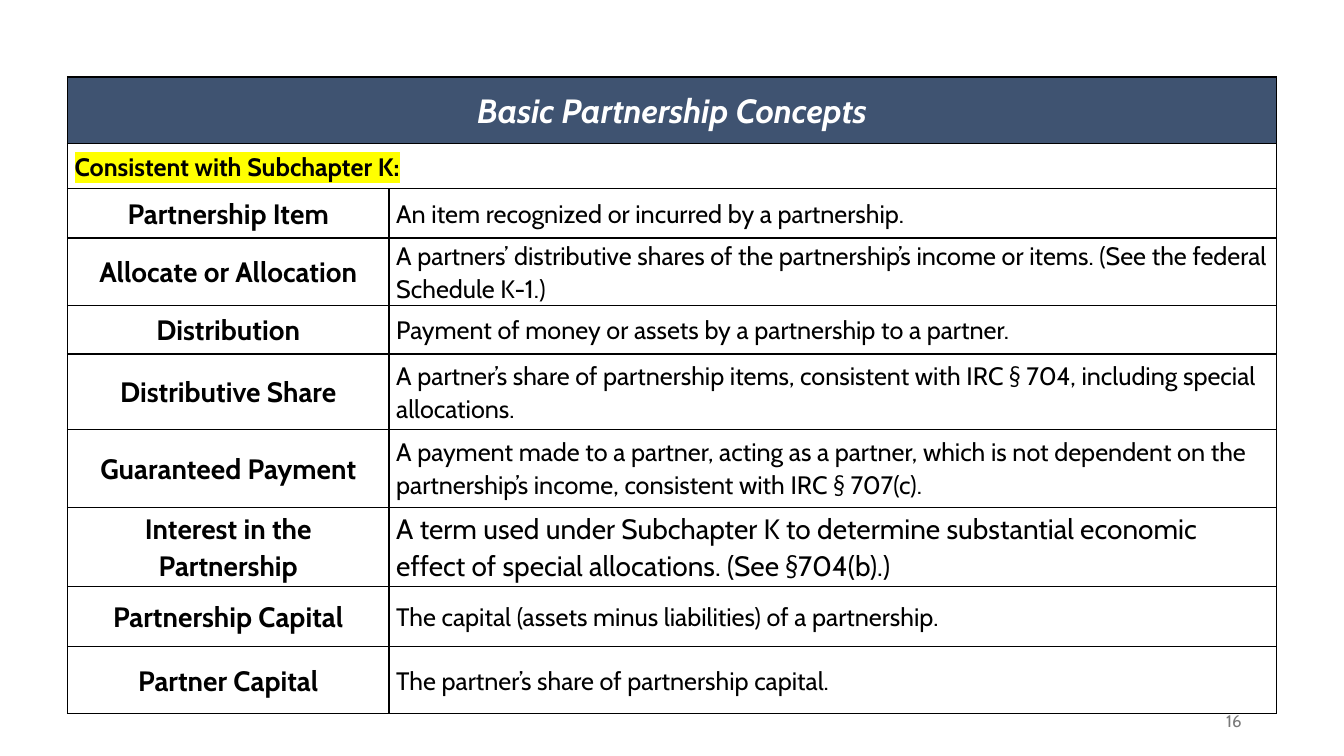
from dataclasses import dataclass

from lxml import etree
from pptx import Presentation
from pptx import util as u
from pptx.dml.color import RGBColor
from pptx.enum import text as t
from pptx.oxml import ns


@dataclass(frozen=True)
class Theme:
    font: str = "Cabin"
    ink: str = "000000"
    header_fill: str = "3F5371"
    header_ink: str = "FFFFFF"
    highlight: str = "FFFF00"
    page_ink: str = "797979"
    title_size: int = 24
    term_size: int = 20
    body_size: int = 18
    page_size: int = 12
    border_width: int = 1


THEME = Theme()

TITLE = "Basic Partnership Concepts"
SUBTITLE = "Consistent with Subchapter K:"
# Term, definition, definition size, row height in cm
CONCEPTS = [
    ("Partnership Item", "An item recognized or incurred by a partnership.",
     THEME.body_size, 1.24),
    ("Allocate or Allocation",
     "A partners’ distributive shares of the partnership’s income or items. "
     "(See the federal Schedule K-1.)", THEME.body_size, 1.7),
    ("Distribution", "Payment of money or assets by a partnership to a partner.",
     THEME.body_size, 1.22),
    ("Distributive Share",
     "A partner’s share of partnership items, consistent with IRC § 704, "
     "including special allocations.", THEME.body_size, 1.9),
    ("Guaranteed Payment",
     "A payment made to a partner, acting as a partner, which is not dependent on "
     "the partnership’s income, consistent with IRC § 707(c).", THEME.body_size, 1.96),
    ("Interest in the Partnership",
     "A term used under Subchapter K to determine substantial economic effect of "
     "special allocations. (See §704(b).)", THEME.term_size, 2.01),
    ("Partnership Capital", "The capital (assets minus liabilities) of a partnership.",
     THEME.body_size, 1.5),
    ("Partner Capital", "The partner’s share of partnership capital.",
     THEME.body_size, 1.7),
]
HEADING_HEIGHTS = [1.68, 1.14]
TERM_SHARE = 0.266


def write_text(frame, words, size, color=THEME.ink, bold=False, italic=False,
               align=t.PP_ALIGN.LEFT, line_spacing=None, space_after=0, highlight=None):
    frame.word_wrap = True
    paragraph = frame.paragraphs[0]
    paragraph.alignment = align
    paragraph.space_after = u.Pt(space_after)
    if line_spacing:
        paragraph.line_spacing = line_spacing
    run = paragraph.add_run()
    run.text = words
    font = run.font
    font.name, font.size, font.bold, font.italic = THEME.font, u.Pt(size), bold, italic
    font.color.rgb = RGBColor.from_string(color)
    if highlight:
        marker = etree.Element(ns.qn("a:highlight"))
        etree.SubElement(marker, ns.qn("a:srgbClr"), val=highlight)
        run._r.rPr.find(ns.qn("a:solidFill")).addnext(marker)


def draw_borders(cell):
    properties = cell._tc.get_or_add_tcPr()
    for index, side in enumerate(("lnL", "lnR", "lnT", "lnB")):
        line = etree.Element(ns.qn(f"a:{side}"), w=str(u.Pt(THEME.border_width)))
        fill = etree.SubElement(line, ns.qn("a:solidFill"))
        etree.SubElement(fill, ns.qn("a:srgbClr"), val=THEME.ink)
        properties.insert(index, line)


def fill_cell(cell, words, size, **text_format):
    cell.margin_left = cell.margin_right = u.Cm(0.18)
    cell.margin_top = cell.margin_bottom = 0
    cell.vertical_anchor = t.MSO_ANCHOR.MIDDLE
    write_text(cell.text_frame, words, size, line_spacing=1.07, space_after=6,
               **text_format)


def add_concept_table(slide, left, top, width):
    heights = HEADING_HEIGHTS + [concept[-1] for concept in CONCEPTS]
    table = slide.shapes.add_table(len(heights), 2, u.Cm(left), u.Cm(top),
                                   u.Cm(width), u.Cm(sum(heights))).table
    table.first_row = table.horz_banding = False
    for column, share in zip(table.columns, (TERM_SHARE, 1 - TERM_SHARE)):
        column.width = u.Cm(width * share)
    for row, height in zip(table.rows, heights):
        row.height = u.Cm(height)
    for cell in table.iter_cells():
        cell.fill.background()
        draw_borders(cell)

    # Heading rows span both columns
    for row in range(len(HEADING_HEIGHTS)):
        table.cell(row, 0).merge(table.cell(row, 1))
    header = table.cell(0, 0)
    header.fill.solid()
    header.fill.fore_color.rgb = RGBColor.from_string(THEME.header_fill)
    fill_cell(header, TITLE, THEME.title_size, color=THEME.header_ink, bold=True,
              italic=True, align=t.PP_ALIGN.CENTER)
    fill_cell(table.cell(1, 0), SUBTITLE, THEME.body_size, bold=True,
              highlight=THEME.highlight)

    # Terms and definitions
    for row, (term, definition, size, _) in enumerate(CONCEPTS, len(HEADING_HEIGHTS)):
        fill_cell(table.cell(row, 0), term, THEME.term_size, bold=True,
                  align=t.PP_ALIGN.CENTER)
        fill_cell(table.cell(row, 1), definition, size)


def add_page_number(slide, number, left, top, width, height):
    box = slide.shapes.add_textbox(u.Cm(left), u.Cm(top), u.Cm(width), u.Cm(height))
    box.text_frame.vertical_anchor = t.MSO_ANCHOR.MIDDLE
    write_text(box.text_frame, number, THEME.page_size, color=THEME.page_ink,
               align=t.PP_ALIGN.RIGHT)


def main():
    presentation = Presentation()
    presentation.slide_width, presentation.slide_height = u.Cm(33.87), u.Cm(19.05)
    slide = presentation.slides.add_slide(presentation.slide_layouts[6])
    add_concept_table(slide, left=1.7, top=1.94, width=30.47)
    add_page_number(slide, "16", left=23.92, top=17.66, width=7.62, height=1.01)
    presentation.save("out.pptx")


if __name__ == "__main__":
    main()
